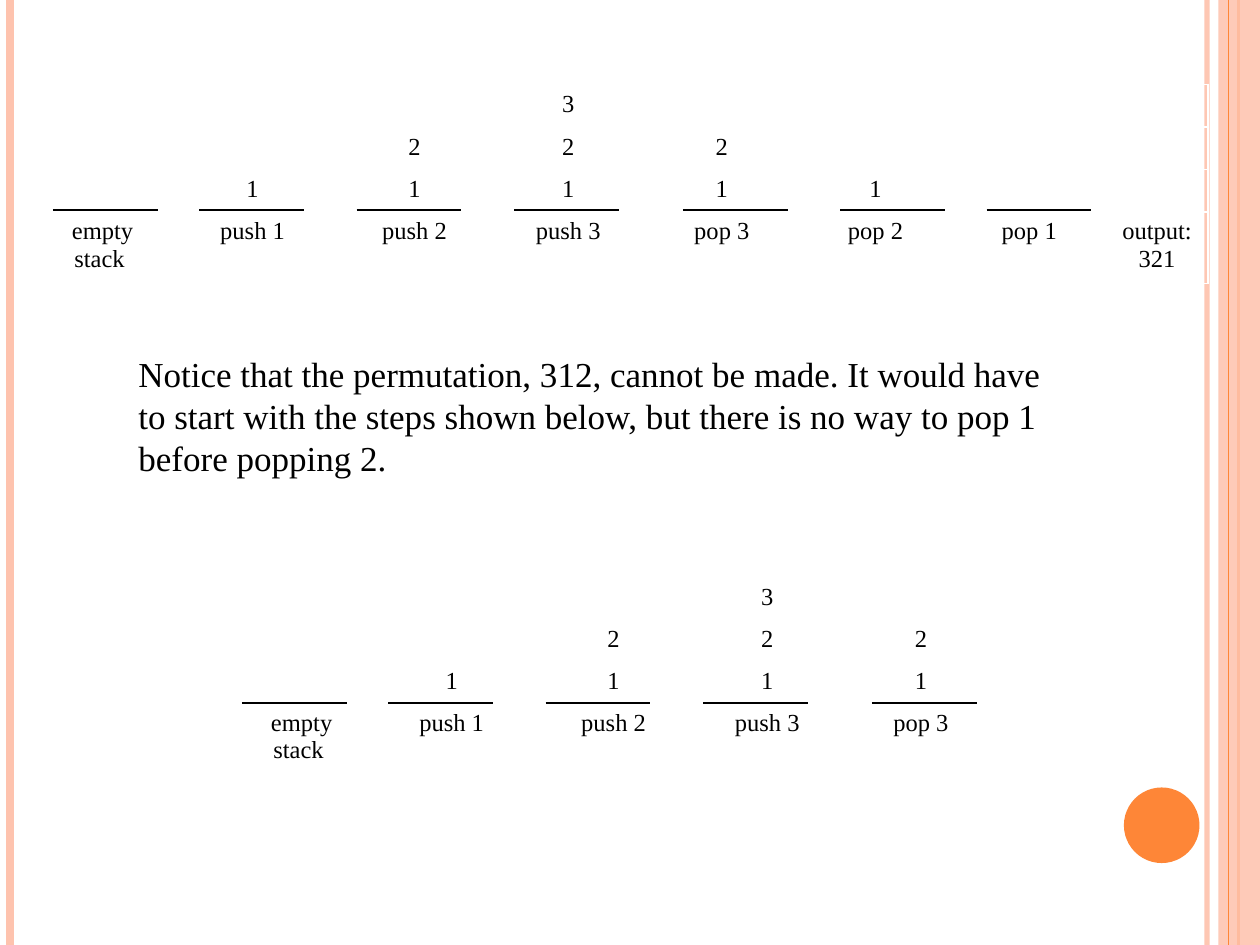
from lxml import etree
from pptx import Presentation
from pptx.dml.color import RGBColor
from pptx.enum.shapes import MSO_CONNECTOR as Connector, MSO_SHAPE as Shape
from pptx.enum.text import MSO_AUTO_SIZE as AutoSize, PP_ALIGN as Align
from pptx.oxml.ns import qn
from pptx.util import Inches, Pt

COLORS = {"ink": "000000", "peach": "FEC3AE", "orange": "FE8637"}
ROW_HEIGHTS = [0.33, 0.33, 0.33, 0.57]
COLUMN_WIDTHS = [1.08, 1.35, 1.22, 1.22, 1.22, 1.22, 1.22, 0.81]
STACK_BASES = [0.42, 1.58, 2.83, 4.08, 5.42, 6.67, 7.83]
BASE_WIDTH = 0.83

# Each step: its label and the height of the stack after it
STEPS = [(" empty stack", 0), ("push 1", 1), ("push 2", 2), ("push 3", 3),
         ("pop 3", 2), ("pop 2", 1), ("pop 1", 0), ("output: 321", 0)]


class SlideBuilder:
    font_name = "Times New Roman"

    def __init__(self, slide):
        self.shapes = slide.shapes

    def color(self, name):
        return RGBColor.from_string(COLORS[name])

    def set_opacity(self, properties, percent):
        color = properties.find(qn("a:solidFill"))[0]
        etree.SubElement(color, qn("a:alpha")).set("val", str(percent * 1000))

    def line(self, start, end, color, width, opacity=100):
        points = [Inches(value) for value in (*start, *end)]
        line = self.shapes.add_connector(Connector.STRAIGHT, *points)
        line.line.color.rgb = self.color(color)
        line.line.width = Pt(width)
        properties = line._element.spPr
        if opacity < 100:
            self.set_opacity(properties.find(qn("a:ln")), opacity)
        etree.SubElement(properties, qn("a:effectLst"))

    def shape(self, kind, box, color, opacity=100):
        shape = self.shapes.add_shape(kind, *map(Inches, box))
        shape.shadow.inherit = False
        shape.fill.solid()
        shape.fill.fore_color.rgb = self.color(color)
        shape.line.fill.background()
        if opacity < 100:
            self.set_opacity(shape._element.spPr, opacity)

    def add_words(self, paragraph, text, size):
        run = paragraph.add_run()
        run.text = text
        for name, value in {"name": self.font_name, "size": Pt(size)}.items():
            setattr(run.font, name, value)
        run.font.color.rgb = self.color("ink")

    def text(self, box, text, size):
        frame = self.shapes.add_textbox(*map(Inches, box)).text_frame
        for name, value in {"word_wrap": True,
                            "auto_size": AutoSize.SHAPE_TO_FIT_TEXT}.items():
            setattr(frame, name, value)
        self.add_words(frame.paragraphs[0], text, size)

    def table(self, left, top, rows, widths, heights, size=14):
        box = (left, top, sum(widths), sum(heights))
        table = self.shapes.add_table(len(rows), len(widths),
                                      *map(Inches, box)).table
        table.first_row = table.horz_banding = False
        for column, width in zip(table.columns, widths):
            column.width = Inches(width)
        for row, height, texts in zip(table.rows, heights, rows):
            row.height = Inches(height)
            for cell, text in zip(row.cells, texts):
                cell.fill.background()
                paragraph = cell.text_frame.paragraphs[0]
                paragraph.alignment = Align.CENTER
                if text:
                    self.add_words(paragraph, text, size)
                else:
                    # Keep empty cells from stretching the row
                    end = etree.SubElement(paragraph._p, qn("a:endParaRPr"))
                    end.set("sz", str(size * 100))

    def stacks(self, left, top, steps, base_shift, base_y):
        rows = [[str(level) if level <= height else "" for _, height in steps]
                for level in (3, 2, 1)]
        rows.append([label for label, _ in steps])
        self.table(left, top, rows, COLUMN_WIDTHS[:len(steps)], ROW_HEIGHTS)
        for base in STACK_BASES[:len(steps)]:
            x = base + base_shift
            self.line((x, base_y), (x + BASE_WIDTH, base_y), "ink", 1.25)


def main():
    deck = Presentation()
    deck.slide_width, deck.slide_height = Inches(10), Inches(7.5)
    builder = SlideBuilder(deck.slides.add_slide(deck.slide_layouts[6]))

    # Side stripes and disc
    def stripe(x, color, width, opacity=100):
        builder.line((x, 0), (x, 7.5), color, width, opacity)

    stripe(9.58, "peach", 3, 93)
    stripe(0.08, "peach", 4.5)
    stripe(9.83, "orange", 1.5)
    builder.shape(Shape.RECTANGLE, (9.67, 0, 0.33, 7.5), "peach", 87)
    stripe(9.75, "orange", 0.75)
    builder.shape(Shape.OVAL, (8.92, 6.25, 0.6, 0.6), "orange")

    # Steps that output 321
    builder.stacks(0.25, 0.67, STEPS, base_shift=0, base_y=1.67)

    # Remark on 312
    builder.text((1, 2.75, 7.5, 1.11),
                 "Notice that the permutation, 312, cannot be made. It would "
                 "have to start with the steps shown below, but there is no "
                 "way to pop 1 before popping 2.", 20)

    # First steps towards 312
    builder.stacks(1.83, 4.58, STEPS[:5], base_shift=1.5, base_y=5.58)

    deck.save("out.pptx")


if __name__ == "__main__":
    main()
